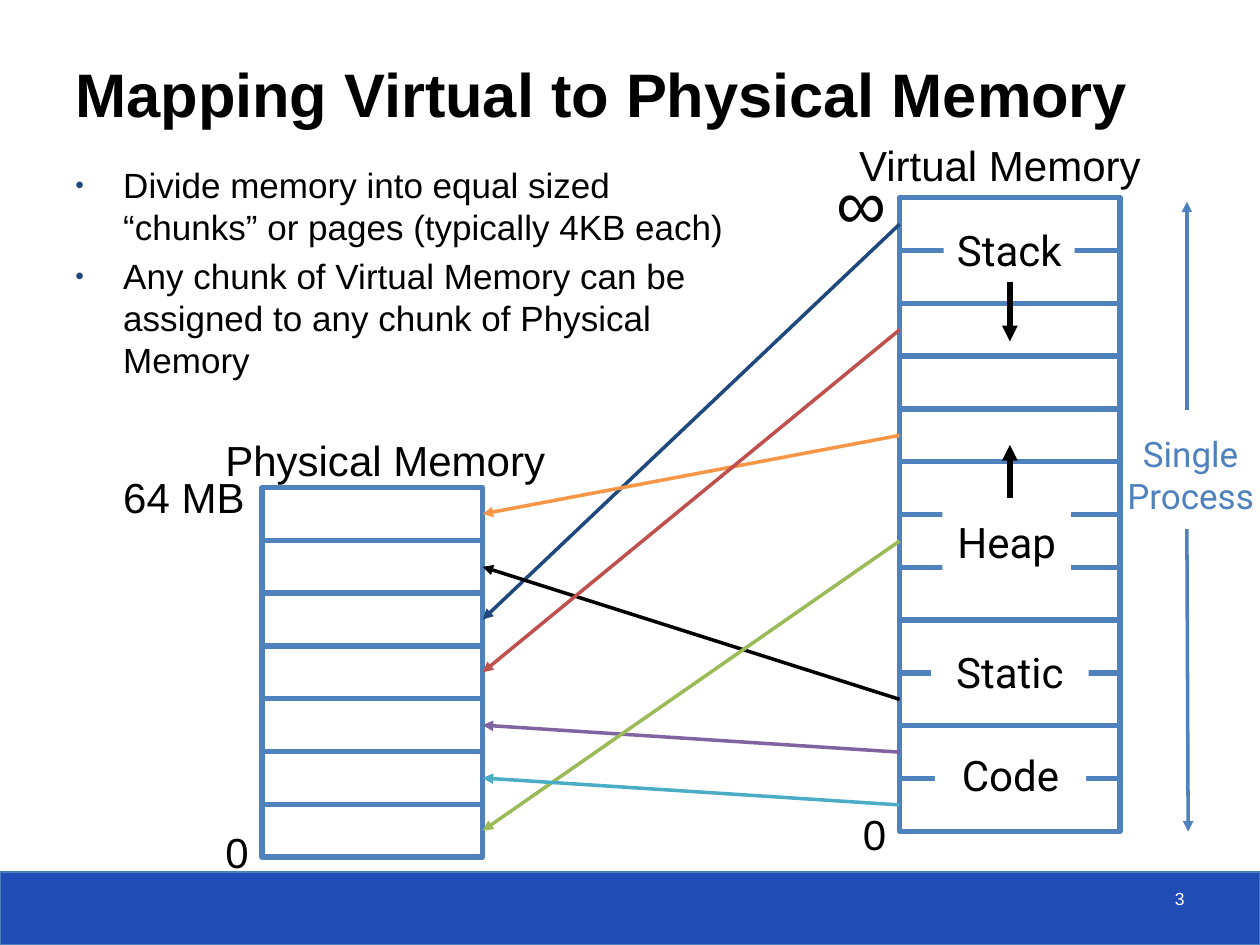
from pptx import Presentation, util as u
from pptx.dml import color as c
from pptx.enum import shapes as s, text as t
from pptx.oxml import xmlchemy as x

ROW, WIDE = 0.419, 1.75
BLUE, BLACK, WHITE = "4F81BD", "000000", "FFFFFF"
LEFT, MID, RIGHT = t.PP_ALIGN.LEFT, t.PP_ALIGN.CENTER, t.PP_ALIGN.RIGHT
LINKS = [(0, 2, "1F497D"), (9, 1, BLACK), (10, 4, "8064A2"), (6, 6, "9BBB59"),
         (4, 0, "F79646"), (2, 3, "C0504D"), (11, 5, "4BACC6")]


def rgb(hue):
    """Turn a hex string into a colour."""
    return c.RGBColor.from_string(hue)


def inch(*nums):
    """Turn numbers into lengths in inches."""
    return [u.Inches(n) for n in nums]


def node(up, tag, **atts):
    """Append an XML element with its attributes."""
    kid = x.OxmlElement(tag)
    for key, val in atts.items():
        kid.set(key, val)
    up.append(kid)
    return kid


def rect(home, box, fill=None, line=None, wide=3):
    """Add a plain rectangle."""
    shp = home.add_shape(s.MSO_SHAPE.RECTANGLE, *inch(*box))
    shp.shadow.inherit = False
    if fill:
        shp.fill.solid()
        shp.fill.fore_color.rgb = rgb(fill)
    else:
        shp.fill.background()
    if line:
        shp.line.color.rgb = rgb(line)
        shp.line.width = u.Pt(wide)
    else:
        shp.line.fill.background()
    return shp


def write(shp, words, size=24, hue=BLACK, face="Arial", align=LEFT, wrap=False, bold=False):
    """Fill a shape with styled text."""
    frame = shp.text_frame
    frame.word_wrap = wrap
    if not wrap:
        frame.auto_size = t.MSO_AUTO_SIZE.SHAPE_TO_FIT_TEXT
    frame.vertical_anchor = t.MSO_ANCHOR.TOP
    frame.text = words
    for para in frame.paragraphs:
        para.alignment = align
        for run in para.runs:
            font = run.font
            font.size, font.name, font.bold = u.Pt(size), face, bold
            font.color.rgb = rgb(hue)
    return frame


def label(home, box, words, **look):
    """Add a text box."""
    return write(home.add_textbox(*inch(*box)), words, **look)


def arrow(home, start, end, hue, wide=2):
    """Draw a line with a triangle at its end."""
    con = home.add_connector(s.MSO_CONNECTOR.STRAIGHT, *inch(*start, *end))
    con.line.color.rgb = rgb(hue)
    con.line.width = u.Pt(wide)
    node(con.line._get_or_add_ln(), "a:tailEnd", type="triangle")
    node(con._element.spPr, "a:effectLst")


def stack(home, left, top, rows):
    """Stack equal pages into one memory."""
    grp = home.add_group_shape().shapes
    for row in range(rows):
        rect(grp, (left, top + row * ROW, WIDE, ROW), line=BLUE)


def bullets(home, box, items):
    """List the points with hanging bullets."""
    frame = label(home, box, "\n".join(items), size=20, wrap=True)
    for num, para in enumerate(frame.paragraphs):
        prop = para._p.get_or_add_pPr()
        prop.set("marL", str(u.Inches(0.38)))
        prop.set("indent", str(-u.Inches(0.38)))
        if num:
            para.space_before = u.Pt(4)
        node(node(prop, "a:buClr"), "a:srgbClr", val="1F497D")
        node(prop, "a:buSzPct", val="70000")
        node(prop, "a:buFont", typeface="Arial")
        node(prop, "a:buChar", char="•")


def physical(home, left, top):
    """Draw physical memory with its labels."""
    label(home, (left - 0.39, top - 0.47, 2.77, 0.5), "Physical Memory")
    label(home, (left - 1.2, top - 0.18, 1.17, 0.5), "64 MB")
    label(home, (left - 0.39, top + 2.64, 0.39, 0.5), "0")
    stack(home, left, top, 7)


def virtual(home, left, top):
    """Draw virtual memory with its regions and its process."""
    label(home, (left - 0.6, top - 0.35, 0.6, 0.77), "∞", size=40)
    label(home, (left - 0.42, top - 0.51, 2.46, 0.5), "Virtual Memory")
    label(home, (left - 0.39, top + 4.8, 0.39, 0.5), "0")
    stack(home, left, top, 12)
    side, core = left + 2.28, left + WIDE / 2
    tag = label(home, (left + 1.71, top + 1.81, 1.2, 0.77), "Single\nProcess",
                size=20, hue=BLUE, face="Roboto", align=MID)
    tag.margin_left = tag.margin_right = 0
    arrow(home, (side, top + 1.68), (side, top + 0.03), BLUE)
    arrow(home, (side, top + 2.63), (side + 0.01, top + 5.03), BLUE)
    arrow(home, (core, top + 2.38), (core, top + 1.96), BLACK, 3)
    arrow(home, (core, top + 0.67), (core, top + 1.14), BLACK, 3)
    for name, dx, dy, wide in [("Stack", 0.35, 0.16, 1.04), ("Heap", 0.34, 2.48, 1.02),
                               ("Static", 0.25, 3.51, 1.25), ("Code", 0.28, 4.33, 1.2)]:
        shp = rect(home, (left + dx, top + dy, wide, 0.5), fill=WHITE)
        write(shp, name, face="Roboto", align=MID, wrap=name in ("Static", "Code"))


def links(home, start, end):
    """Map virtual pages to physical pages."""
    for src, dst, hue in LINKS:
        arrow(home, (start[0], start[1] + (src + 0.5) * ROW),
              (end[0] + WIDE, end[1] + (dst + 0.5) * ROW), hue)


def main():
    """Build the slide and save it."""
    deck = Presentation()
    deck.slide_width, deck.slide_height = inch(10, 7.5)
    home = deck.slides.add_slide(deck.slide_layouts[6]).shapes
    rect(home, (0, 6.92, 10, 0.58), "204DB5", "4B7EBC", 0.75)
    head = label(home, (0.5, 0.25, 9.22, 0.83), "Mapping Virtual to Physical Memory",
                 size=35.1, wrap=True, bold=True)
    head.vertical_anchor = t.MSO_ANCHOR.BOTTOM
    bullets(home, (0.5, 1.25, 5.4, 5.58), [
        "Divide memory into equal sized “chunks” or pages (typically 4KB each)",
        "Any chunk of Virtual Memory can be assigned to any chunk of Physical Memory"])
    label(home, (7.17, 7, 2.33, 0.33), "3", size=10, hue=WHITE, align=RIGHT, wrap=True)
    phys, virt = (2.08, 3.87), (7.14, 1.57)
    physical(home, *phys)
    virtual(home, *virt)
    links(home, virt, phys)
    deck.save("out.pptx")


if __name__ == "__main__":
    main()
